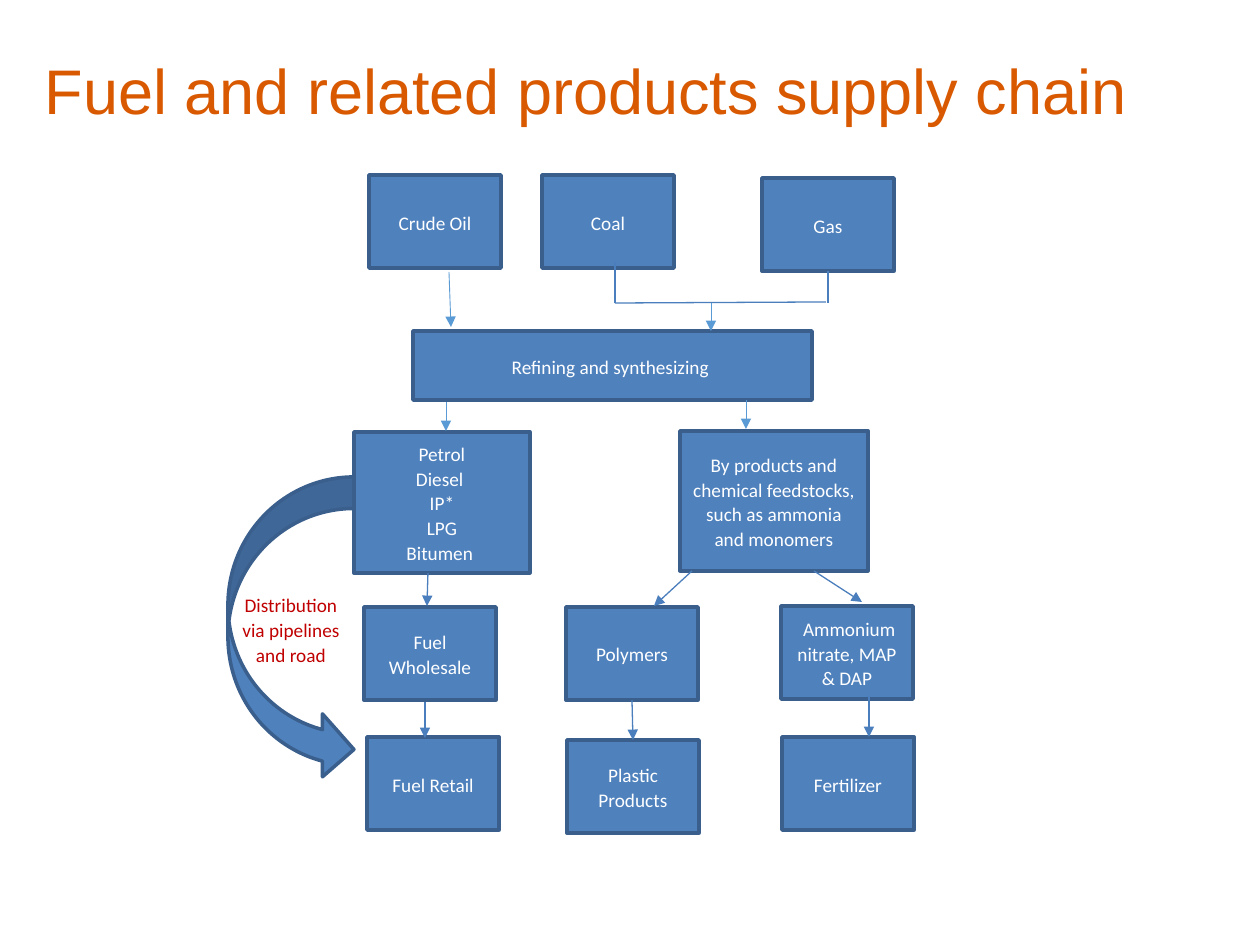
from typing import NamedTuple, Optional

from lxml.etree import SubElement
from pptx import Presentation
from pptx.dml.color import RGBColor
from pptx.enum.shapes import MSO_CONNECTOR, MSO_SHAPE
from pptx.enum.text import MSO_ANCHOR, MSO_AUTO_SIZE, PP_ALIGN
from pptx.oxml.ns import qn
from pptx.util import Emu, Pt

PX = 914400 / 126
ORANGE = RGBColor(0xD9, 0x59, 0x00)
BLUE = RGBColor(0x4F, 0x81, 0xBD)
NAVY = RGBColor(0x3A, 0x5F, 0x8C)
LINE_BLUE = RGBColor(0x4B, 0x7E, 0xBC)
SKY = RGBColor(0x5B, 0x9B, 0xD5)
WHITE = RGBColor(0xFF, 0xFF, 0xFF)
RED = RGBColor(0xC0, 0x00, 0x00)


class Node(NamedTuple):
    text: str
    x: int
    y: int
    w: int = 132
    h: int = 93
    space_after: int = 8
    color: RGBColor = WHITE
    kind: MSO_SHAPE = MSO_SHAPE.RECTANGLE


class Link(NamedTuple):
    x1: int
    y1: int
    x2: int
    y2: int
    color: RGBColor = LINE_BLUE
    width: float = 0.75
    arrow: bool = True
    begin: Optional[str] = None
    end: Optional[str] = None


NODES = [
    Node("Crude Oil", 369, 175),
    Node("Coal", 542, 175),
    Node("Gas", 762, 178),
    Node("Refining and synthesizing ", 413, 331, 399, 69, 0),
    Node("Petrol\nDiesel \nIP*\nLPG\nBitumen ", 354, 432, 176, 141, 0),
    Node("By products and chemical feedstocks, such as ammonia and monomers",
         680, 431, 188, 140),
    Node("Fuel Wholesale", 364, 607),
    Node("Polymers", 566, 607),
    Node(" Ammonium nitrate, MAP & DAP", 781, 606),
    Node("Fuel Retail", 367, 737),
    Node("Plastic Products", 567, 740),
    Node("Fertilizer", 782, 737),
    Node("Distribution via pipelines and road", 228, 477, 126, 304,
         color=RED, kind=MSO_SHAPE.CURVED_RIGHT_ARROW),
]

LINKS = [
    Link(828, 271, 828, 303, arrow=False, begin="Gas"),
    Link(615, 262, 615, 303, arrow=False),
    Link(615, 303, 826, 302, arrow=False),
    Link(711, 303, 711, 331, SKY, 0.5),
    Link(449, 272, 451, 327, SKY, 0.5),
    Link(446, 402, 446, 431, SKY, 0.5),
    Link(746, 400, 746, 429, SKY, 0.5),
    Link(428, 573, 427, 606),
    Link(692, 571, 654, 606),
    Link(814, 571, 862, 602),
    Link(425, 702, 425, 738),
    Link(632, 700, 633, 740, begin="Polymers", end="Plastic Products"),
    Link(869, 696, 869, 737),
]


def px(*lengths: int) -> list[Emu]:
    """Turn pixel lengths into EMU."""
    return [Emu(round(n * PX)) for n in lengths]


def add_title(s, text: str) -> None:
    """Place and format the slide title."""
    sp = s.shapes.title
    sp.left, sp.top, sp.width, sp.height = px(32, 35, 1134, 108)
    tf = sp.text_frame
    tf.text = text
    tf.auto_size = MSO_AUTO_SIZE.NONE
    tf.vertical_anchor = MSO_ANCHOR.MIDDLE
    p = tf.paragraphs[0]
    p.alignment = PP_ALIGN.LEFT
    p.font.name, p.font.size = "Arial", Pt(36)
    p.font.color.rgb = ORANGE


def add_node(s, node: Node):
    """Draw one filled shape with centred text."""
    sp = s.shapes.add_shape(node.kind, *px(node.x, node.y, node.w, node.h))
    sp.shadow.inherit = False
    sp.fill.solid()
    sp.fill.fore_color.rgb = BLUE
    sp.line.color.rgb = NAVY
    sp.line.width = Pt(2)
    tf = sp.text_frame
    tf.text = node.text
    tf.word_wrap = True
    tf.vertical_anchor = MSO_ANCHOR.MIDDLE
    for p in tf.paragraphs:
        p.alignment = PP_ALIGN.CENTER
        p.line_spacing = 1.07
        p.space_after = Pt(node.space_after)
        p.font.name, p.font.size = "Calibri", Pt(11)
        p.font.color.rgb = node.color
    return sp


def add_link(s, link: Link, shapes: dict) -> None:
    """Draw one line, with an arrowhead and joined ends where asked."""
    c = s.shapes.add_connector(MSO_CONNECTOR.STRAIGHT, *px(*link[:4]))
    if link.begin:
        c.begin_connect(shapes[link.begin], 2)
    if link.end:
        c.end_connect(shapes[link.end], 0)
    c.line.color.rgb = link.color
    c.line.width = Pt(link.width)
    if link.arrow:
        SubElement(c.line._get_or_add_ln(), qn("a:tailEnd"), type="triangle")
    SubElement(c._element.spPr, qn("a:effectLst"))


def main() -> None:
    """Build and save the supply chain slide."""
    prs = Presentation()
    prs.slide_width, prs.slide_height = px(1260, 945)
    s = prs.slides.add_slide(prs.slide_layouts[5])
    add_title(s, "Fuel and related products supply chain")
    shapes = {node.text: add_node(s, node) for node in NODES}
    for link in LINKS:
        add_link(s, link, shapes)
    prs.save("out.pptx")


if __name__ == "__main__":
    main()
